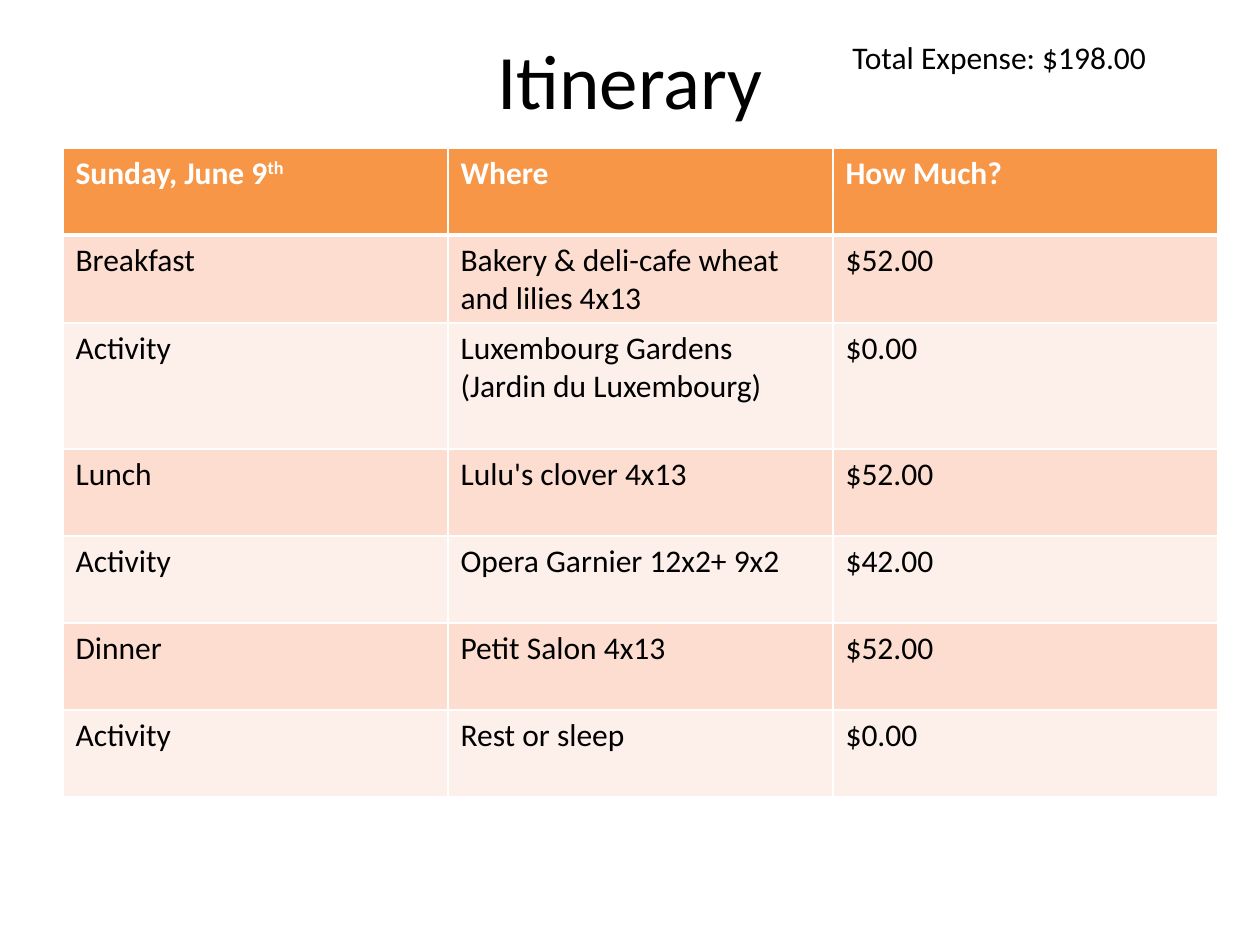
import pptx
import pptx.dml.color
import pptx.enum.text
import pptx.oxml.ns
import pptx.util
import lxml.etree

THEME = {
    "font": "Calibri",
    "title_size": 44,
    "body_size": 18,
    "ink": "000000",
    "paper": "FFFFFF",
    "header": "F79646",
    "bands": ["FDEFE9", "FCDDCF"],
}
EMU_PER_PX = 914400 / 126


def px(length):
    return pptx.util.Emu(round(length * EMU_PER_PX))


def add_text(paragraph, text, size, color, bold=False):
    run = paragraph.add_run()
    run.text = text
    formats = {"name": THEME["font"], "size": pptx.util.Pt(size), "bold": bold}
    for attribute, value in formats.items():
        setattr(run.font, attribute, value)
    run.font.color.rgb = pptx.dml.color.RGBColor.from_string(color)
    return run


deck = pptx.Presentation()
deck.slide_width, deck.slide_height = px(1260), px(945)
slide = deck.slides.add_slide(deck.slide_layouts[5])

heading = slide.shapes.title
title_box = {"left": px(63), "top": px(0), "width": px(1134), "height": px(158)}
for attribute, value in title_box.items():
    setattr(heading, attribute, value)
heading.text_frame.vertical_anchor = pptx.enum.text.MSO_ANCHOR.MIDDLE
heading_line = heading.text_frame.paragraphs[0]
heading_line.alignment = pptx.enum.text.PP_ALIGN.CENTER
add_text(heading_line, "Itinerary", THEME["title_size"], THEME["ink"])

total = slide.shapes.add_textbox(px(840), px(32), px(388), px(51))
total.text_frame.word_wrap = True
total.text_frame.auto_size = pptx.enum.text.MSO_AUTO_SIZE.SHAPE_TO_FIT_TEXT
add_text(total.text_frame.paragraphs[0], "Total Expense: $198.00",
         THEME["body_size"], THEME["ink"])

schedule = [
    ("Sunday, June 9", "Where", "How Much?"),
    ("Breakfast", "Bakery & deli-cafe wheat and lilies 4x13", "$52.00"),
    ("Activity", "Luxembourg Gardens (Jardin du Luxembourg)", "$0.00"),
    ("Lunch", "Lulu's clover 4x13", "$52.00"),
    ("Activity", "Opera Garnier 12x2+ 9x2", "$42.00"),
    ("Dinner", "Petit Salon 4x13", "$52.00"),
    ("Activity", "Rest or sleep", "$0.00"),
]
row_heights = [87, 87, 126, 87, 87, 87, 87]
column_width = 385

itinerary = slide.shapes.add_table(
    len(schedule), 3, px(63), px(148), px(3 * column_width), px(sum(row_heights))
).table
for column in itinerary.columns:
    column.width = px(column_width)

for row_index, entries in enumerate(schedule):
    itinerary.rows[row_index].height = px(row_heights[row_index])
    is_header = row_index == 0
    fill_color = THEME["header"] if is_header else THEME["bands"][row_index % 2]
    text_color = THEME["paper"] if is_header else THEME["ink"]
    border_points = {
        "lnL": 1,
        "lnR": 1,
        "lnT": 3 if row_index == 1 else 1,
        "lnB": 3 if is_header else 1,
    }
    for column_index, entry in enumerate(entries):
        cell = itinerary.cell(row_index, column_index)
        properties = cell._tc.get_or_add_tcPr()
        for side, points in border_points.items():
            border = lxml.etree.SubElement(
                properties, pptx.oxml.ns.qn(f"a:{side}"), w=str(pptx.util.Pt(points)))
            border_fill = lxml.etree.SubElement(border, pptx.oxml.ns.qn("a:solidFill"))
            lxml.etree.SubElement(
                border_fill, pptx.oxml.ns.qn("a:srgbClr"), val=THEME["paper"])
        cell.fill.solid()
        cell.fill.fore_color.rgb = pptx.dml.color.RGBColor.from_string(fill_color)
        add_text(cell.text_frame.paragraphs[0], entry, THEME["body_size"],
                 text_color, is_header)

date_line = itinerary.cell(0, 0).text_frame.paragraphs[0]
ordinal = add_text(date_line, "th", THEME["body_size"], THEME["paper"], True)
ordinal._r.get_or_add_rPr().set("baseline", "30000")

deck.save("out.pptx")
